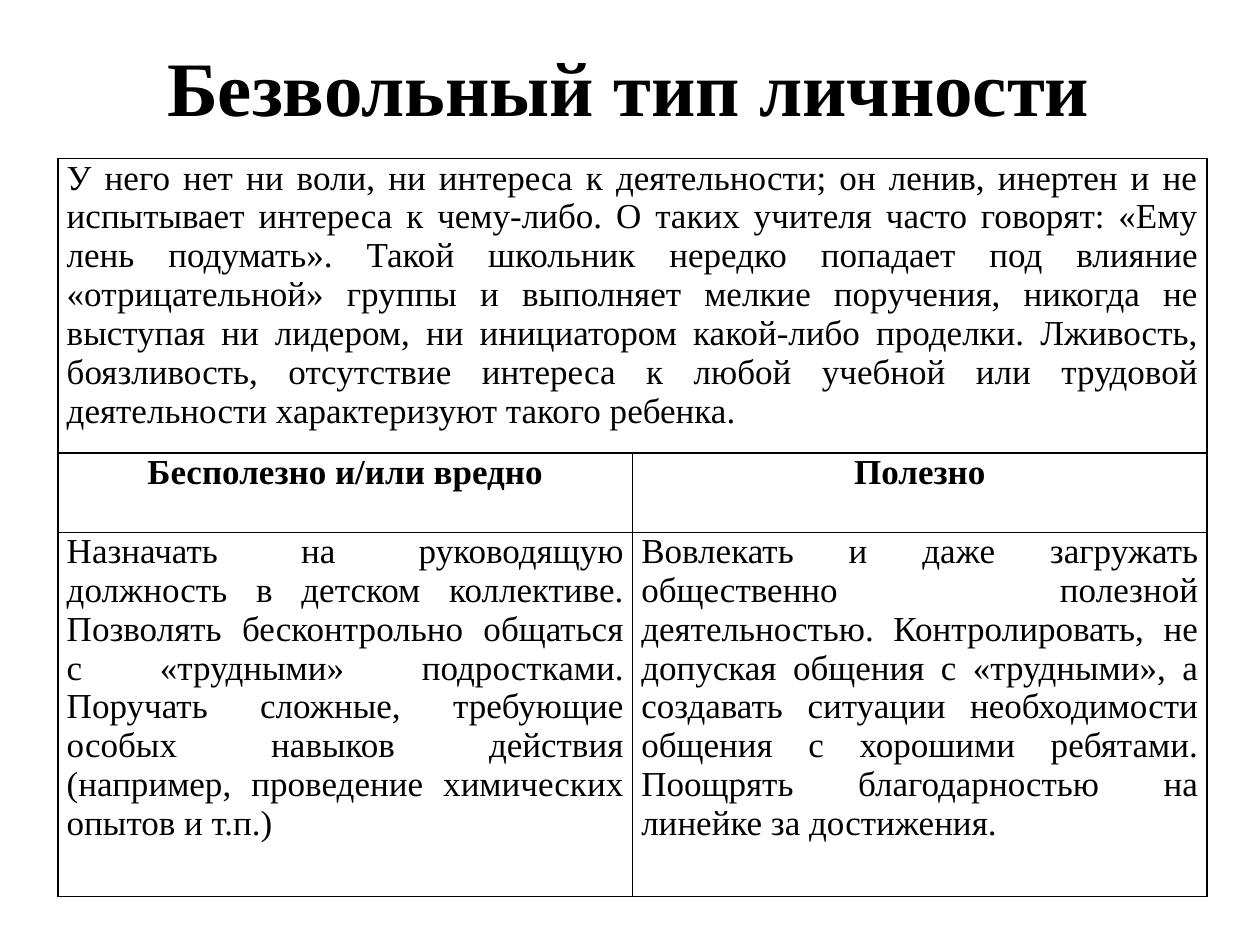
from pptx import Presentation
from pptx.dml.color import RGBColor
from pptx.enum.text import MSO_ANCHOR, PP_ALIGN
from pptx.oxml import parse_xml
from pptx.oxml.ns import nsdecls
from pptx.util import Inches, Pt

BLACK = "000000"
WHITE = "FFFFFF"


def add_text(paragraph, text, size, bold, alignment):
    paragraph.alignment = alignment
    run = paragraph.add_run()
    run.text = text
    run.font.name = "Times New Roman"
    run.font.size = Pt(size)
    run.font.bold = bold
    run.font.color.rgb = RGBColor.from_string(BLACK)


def style_cell(cell):
    """Set narrow margins, black borders and a white fill."""
    cell.margin_left = cell.margin_right = Inches(0.07)
    cell.margin_top = cell.margin_bottom = 0
    cell.vertical_anchor = MSO_ANCHOR.TOP
    properties = cell._tc.get_or_add_tcPr()
    for side in ("lnL", "lnR", "lnT", "lnB"):
        properties.append(parse_xml(
            f'<a:{side} {nsdecls("a")} w="{Pt(1)}"><a:solidFill>'
            f'<a:srgbClr val="{BLACK}"/></a:solidFill></a:{side}>'
        ))
    cell.fill.solid()
    cell.fill.fore_color.rgb = RGBColor.from_string(WHITE)


presentation = Presentation()
presentation.slide_width = Inches(10)
presentation.slide_height = Inches(7.5)
slide = presentation.slides.add_slide(presentation.slide_layouts[6])

title = slide.shapes.add_textbox(Inches(0.68), 0, Inches(8.62), Inches(1.45))
title.text_frame.word_wrap = True
title.text_frame.vertical_anchor = MSO_ANCHOR.MIDDLE
title_paragraph = title.text_frame.paragraphs[0]
title_paragraph.line_spacing = 0.9
add_text(title_paragraph, "Безвольный тип личности", 44, True, PP_ALIGN.CENTER)

description = (
    "У него нет ни воли, ни интереса к деятельности; он ленив, инертен и не "
    "испытывает интереса к чему-либо. О таких учителя часто говорят: «Ему лень "
    "подумать». Такой школьник нередко попадает под влияние «отрицательной» "
    "группы и выполняет мелкие поручения, никогда не выступая ни лидером, ни "
    "инициатором какой-либо проделки. Лживость, боязливость, отсутствие интереса "
    "к любой учебной или трудовой деятельности характеризуют такого ребенка."
)
harmful = (
    "Назначать на руководящую должность в детском коллективе. Позволять "
    "бесконтрольно общаться с «трудными» подростками. Поручать сложные, "
    "требующие особых навыков действия (например, проведение химических "
    "опытов и т.п.)"
)
useful = (
    "Вовлекать и даже загружать общественно полезной деятельностью. "
    "Контролировать, не допуская общения с «трудными», а создавать ситуации "
    "необходимости общения с хорошими ребятами. Поощрять благодарностью на "
    "линейке за достижения."
)
rows = [
    (2.31, False, PP_ALIGN.JUSTIFY, [description]),
    (0.63, True, PP_ALIGN.CENTER, ["Бесполезно и/или вредно", "Полезно"]),
    (2.89, False, PP_ALIGN.JUSTIFY, [harmful, useful]),
]

table = slide.shapes.add_table(
    len(rows), 2, Inches(0.46), Inches(1.26), Inches(9.12), Inches(5.83)
).table
table.first_row = False
table.horz_banding = False
table.cell(0, 0).merge(table.cell(0, 1))
for cell in table.iter_cells():
    style_cell(cell)

for row_index, (height, bold, alignment, texts) in enumerate(rows):
    table.rows[row_index].height = Inches(height)
    for column_index, text in enumerate(texts):
        paragraph = table.cell(row_index, column_index).text_frame.paragraphs[0]
        add_text(paragraph, text, 20, bold, alignment)

presentation.save("out.pptx")
